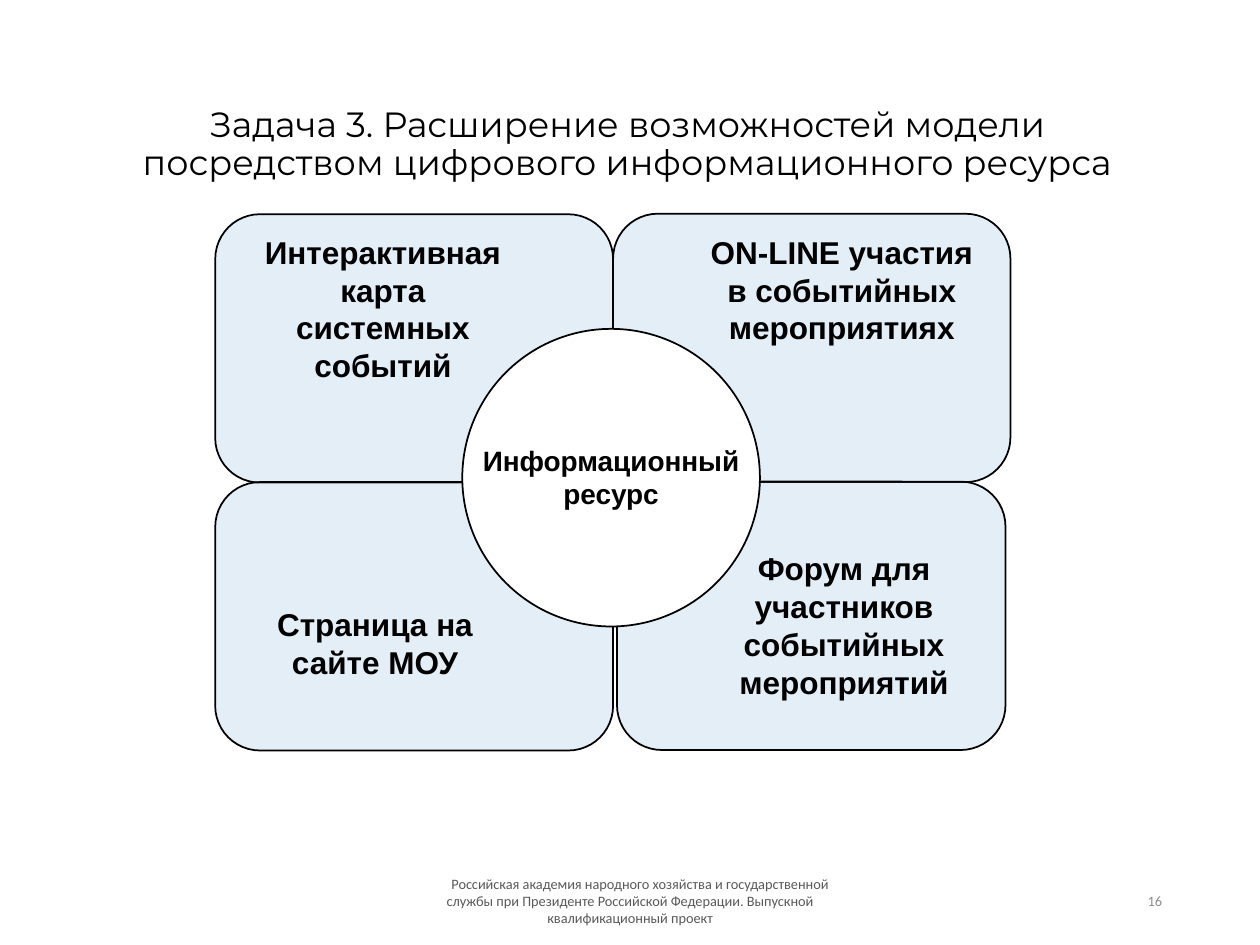
from lxml import etree
from pptx import Presentation
from pptx.dml.color import RGBColor
from pptx.enum import shapes, text
from pptx.oxml.ns import qn
from pptx.util import Cm, Pt

BLACK = RGBColor(0x00, 0x00, 0x00)
WHITE = RGBColor(0xFF, 0xFF, 0xFF)
BLUE = RGBColor(0x5B, 0x9B, 0xD5)
DARK_GREY = RGBColor(0x59, 0x59, 0x59)
LIGHT_GREY = RGBColor(0x8C, 0x8C, 0x8C)

PANELS = [
    (4.34, 4.32, 8.02),
    (12.36, 4.31, 8.01),
    (12.44, 9.71, 7.83),
    (4.34, 9.72, 8.02),
]
PANEL_HEIGHT = 5.41
LABELS = [
    (["Интерактивная карта системных событий"], (4.9, 4.57, 5.64, 3.33), 18),
    (["ON-LINE участия", "в событийных мероприятиях"], (13.67, 4.57, 6.6, 2.57), 18),
    (["Форум для участников событийных мероприятий"], (14.5, 10.95, 5.03, 3.33), 18),
    (["Страница на сайте МОУ"], (4.6, 12.07, 5.92, 1.8), 18),
    (["Информационный ресурс"], (9.02, 8.81, 6.6, 1.63), 16),
]
FOOTER = (
    "Российская академия народного хозяйства и государственной службы при "
    "Президенте Российской Федерации. Выпускной квалификационный проект"
)


def write(box, lines, size=18, font="Arial", color=BLACK, bold=False,
          align=text.PP_ALIGN.CENTER, anchor=text.MSO_ANCHOR.TOP,
          spacing=None, indent=None):
    """Fill a box with one formatted paragraph per line."""
    frame = box.text_frame
    frame.word_wrap = True
    frame.auto_size = text.MSO_AUTO_SIZE.NONE
    frame.vertical_anchor = anchor
    for index, line in enumerate(lines):
        para = frame.add_paragraph() if index else frame.paragraphs[0]
        para.alignment = align
        if spacing:
            para.line_spacing = spacing
        if indent:
            para._p.get_or_add_pPr().set("indent", str(indent))
        span = para.add_run()
        span.text = line
        span.font.size = Pt(size)
        span.font.name = font
        span.font.bold = bold
        span.font.color.rgb = color


def add_text(page, lines, place, **style):
    """Add a text box at a place given in centimetres."""
    box = page.shapes.add_textbox(*map(Cm, place))
    write(box, lines, **style)


def add_outlined(page, kind, place, fill, opacity=None):
    """Add a black-outlined shape, optionally with a translucent fill."""
    shape = page.shapes.add_shape(kind, *map(Cm, place))
    shape.shadow.inherit = False
    shape.fill.solid()
    shape.fill.fore_color.rgb = fill
    shape.line.color.rgb = BLACK
    shape.line.width = Pt(1)
    if opacity:
        color = shape._element.spPr.find(qn("a:solidFill")).find(qn("a:srgbClr"))
        etree.SubElement(color, qn("a:alpha")).set("val", str(opacity * 1000))


def set_title(page, title, place):
    """Move the title placeholder and write the heading in it."""
    box = page.shapes.title
    box.left, box.top, box.width, box.height = map(Cm, place)
    write(box, [title], size=20, font="Montserrat",
          anchor=text.MSO_ANCHOR.MIDDLE, spacing=0.9)


def main():
    """Build the slide and save it."""
    deck = Presentation()
    deck.slide_width, deck.slide_height = Cm(25.4), Cm(19.05)
    page = deck.slides.add_slide(deck.slide_layouts[5])

    set_title(page, "Задача 3. Расширение возможностей модели посредством "
              "цифрового информационного ресурса", (1.7, 2.13, 21.9, 1.6))

    for left, top, width in PANELS:
        add_outlined(page, shapes.MSO_SHAPE.ROUNDED_RECTANGLE,
                     (left, top, width, PANEL_HEIGHT), BLUE, opacity=17)
    add_outlined(page, shapes.MSO_SHAPE.OVAL, (9.32, 6.63, 6, 6), WHITE)
    for lines, place, size in LABELS:
        add_text(page, lines, place, size=size, bold=True)

    small = {"size": 8.2, "font": "Calibri", "anchor": text.MSO_ANCHOR.MIDDLE}
    add_text(page, [FOOTER], (8.41, 17.65, 8.59, 1.02), color=DARK_GREY,
             indent=Cm(0.4), **small)
    add_text(page, ["16"], (17.96, 17.65, 5.72, 1.02), color=LIGHT_GREY,
             align=text.PP_ALIGN.RIGHT, **small)

    deck.save("out.pptx")


if __name__ == "__main__":
    main()
